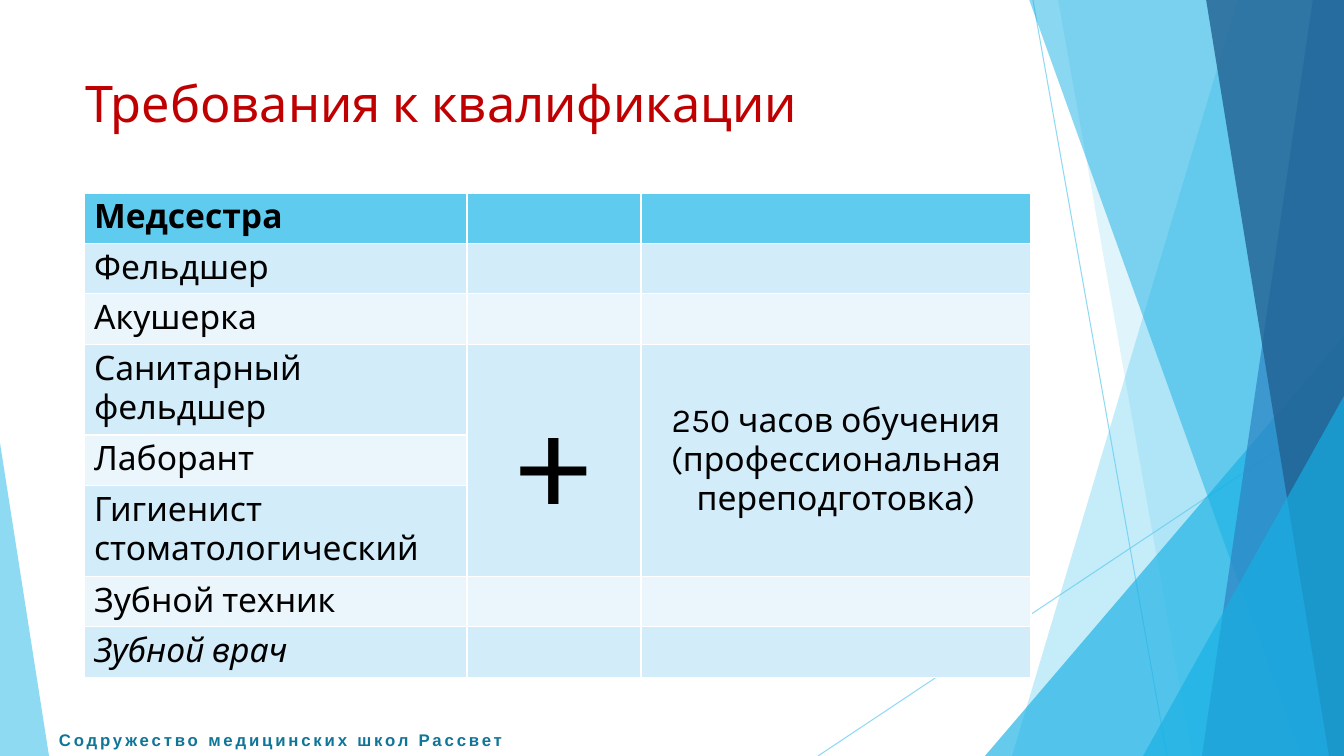
import pptx
import pptx.util
import pptx.dml.color
import pptx.enum.shapes
import pptx.enum.text
import pptx.oxml.ns

PX = 914400 / 100.8
WIDTH, HEIGHT = 1344, 756
SKY, CYAN, BLACK = "5FCBEF", "17B0E4", "000000"
BANDS = ["EAF6FC", "D2ECF9"]
ALIGN = pptx.enum.text.PP_ALIGN
ANCHOR = pptx.enum.text.MSO_ANCHOR

# Left and right x at the top, then right and left x at the bottom, colour, opacity
RIBBONS_BACK = [
    ([1238, WIDTH, WIDTH, 1012], SKY, 36),
    ([1058, WIDTH, WIDTH, 1192], SKY, 20),
]
RIBBONS_FRONT = [
    ([1029, WIDTH, WIDTH, 1301], CYAN, 50),
    ([1313, WIDTH, WIDTH, 1202], "2E83C3", 70),
    ([1206, WIDTH, WIDTH, 1329], "226292", 80),
]

JOBS = ["Медсестра", "Фельдшер", "Акушерка", "Санитарный фельдшер", "Лаборант",
        "Гигиенист стоматологический", "Зубной техник", "Зубной врач"]
TWO_LINE_JOBS = {3, 5}
MERGE_TOP, MERGE_BOTTOM = 3, 5


def px(length):
    return pptx.util.Emu(round(length * PX))


def paint(color_format, color):
    color_format.rgb = pptx.dml.color.RGBColor.from_string(color)


def set_opacity(properties, percent):
    color = next(properties.iter(pptx.oxml.ns.qn("a:srgbClr")))
    alpha = color.makeelement(pptx.oxml.ns.qn("a:alpha"), {"val": str(percent * 1000)})
    color.append(alpha)


def style_shape(shape, color, opacity):
    shape.shadow.inherit = False
    shape.line.fill.background()
    shape.fill.solid()
    paint(shape.fill.fore_color, color)
    set_opacity(shape._element.spPr, opacity)


def add_ribbon(page, corners, color, opacity):
    top_left, top_right, bottom_right, bottom_left = map(px, corners)
    top, bottom = px(-1), px(HEIGHT)
    builder = page.shapes.build_freeform(top_left, top)
    builder.add_line_segments([(top_right, top), (bottom_right, bottom),
                               (bottom_left, bottom)], close=True)
    style_shape(builder.convert_to_shape(), color, opacity)


def add_triangle(page, left, top, width, apex, color, opacity):
    triangle = page.shapes.add_shape(
        pptx.enum.shapes.MSO_SHAPE.ISOSCELES_TRIANGLE,
        px(left), px(top), px(width), px(HEIGHT - top))
    triangle.adjustments[0] = apex
    style_shape(triangle, color, opacity)


def add_thin_line(page, start_x, start_y, end_x, end_y):
    line = page.shapes.add_connector(pptx.enum.shapes.MSO_CONNECTOR.STRAIGHT,
                                     px(start_x), px(start_y), px(end_x), px(end_y))
    line.line.width = pptx.util.Pt(0.75)
    paint(line.line.color, SKY)
    properties = line._element.spPr
    set_opacity(properties, 70)
    properties.append(properties.makeelement(pptx.oxml.ns.qn("a:effectLst"), {}))


def write(frame, text, size, color, font="Karla", bold=False, italic=False,
          align=ALIGN.LEFT):
    para = frame.paragraphs[0]
    para.alignment = align
    span = para.add_run()
    span.text = text
    span.font.name = font
    span.font.size = pptx.util.Pt(size)
    span.font.bold = bold
    span.font.italic = italic
    paint(span.font.color, color)
    return span


def set_title(page, text):
    title = page.shapes.title
    title.left, title.top, title.width, title.height = px(75), px(67), px(948), px(97)
    frame = title.text_frame
    frame.auto_size = pptx.enum.text.MSO_AUTO_SIZE.NONE
    frame.vertical_anchor = ANCHOR.TOP
    write(frame, text, 36, "C00000")


def add_footer(page, text):
    box = page.shapes.add_textbox(px(49), px(725), px(760), px(30))
    box.text_frame.word_wrap = True
    span = write(box.text_frame, text, 12, "0F7698", font="Arial", bold=True)
    span.font._element.set("spc", "200")


def add_jobs_table(page):
    heights = [88 if row in TWO_LINE_JOBS else 49 for row in range(len(JOBS))]
    widths = [383, 174, 390]
    # The default table style draws the white borders
    table = page.shapes.add_table(len(JOBS), len(widths), px(84), px(193),
                                  px(sum(widths)), px(sum(heights))).table
    for column, width in zip(table.columns, widths):
        column.width = px(width)

    # Job names and bands
    for index, job in enumerate(JOBS):
        table.rows[index].height = px(heights[index])
        for cell in table.rows[index].cells:
            cell.fill.solid()
            paint(cell.fill.fore_color, BANDS[index % 2] if index else SKY)
        write(table.cell(index, 0).text_frame, job, 24, BLACK,
              bold=index == 0, italic=index == len(JOBS) - 1)

    # Requirement shared by the jobs
    shared = [("+", 96), ("250 часов обучения (профессиональная переподготовка)", 24)]
    for column, (text, size) in enumerate(shared, start=1):
        cell = table.cell(MERGE_TOP, column)
        cell.merge(table.cell(MERGE_BOTTOM, column))
        cell.vertical_anchor = ANCHOR.MIDDLE
        write(cell.text_frame, text, size, BLACK, align=ALIGN.CENTER)


def main():
    deck = pptx.Presentation()
    deck.slide_width, deck.slide_height = px(WIDTH), px(HEIGHT)
    page = deck.slides.add_slide(deck.slide_layouts[5])

    # Footer and decoration, back to front
    add_footer(page, "Содружество медицинских школ Рассвет")
    add_thin_line(page, 1033, 0, 1167, HEIGHT)
    add_thin_line(page, WIDTH, 406, 818, HEIGHT)
    for ribbon in RIBBONS_BACK:
        add_ribbon(page, *ribbon)
    add_triangle(page, 985, 336, 359, 1, CYAN, 66)
    for ribbon in RIBBONS_FRONT:
        add_ribbon(page, *ribbon)
    add_triangle(page, 1143, 396, 201, 1, CYAN, 66)
    add_triangle(page, 0, 443, 49, 0, SKY, 70)

    # Content
    set_title(page, "Требования к квалификации")
    add_jobs_table(page)
    deck.save("out.pptx")


if __name__ == "__main__":
    main()
